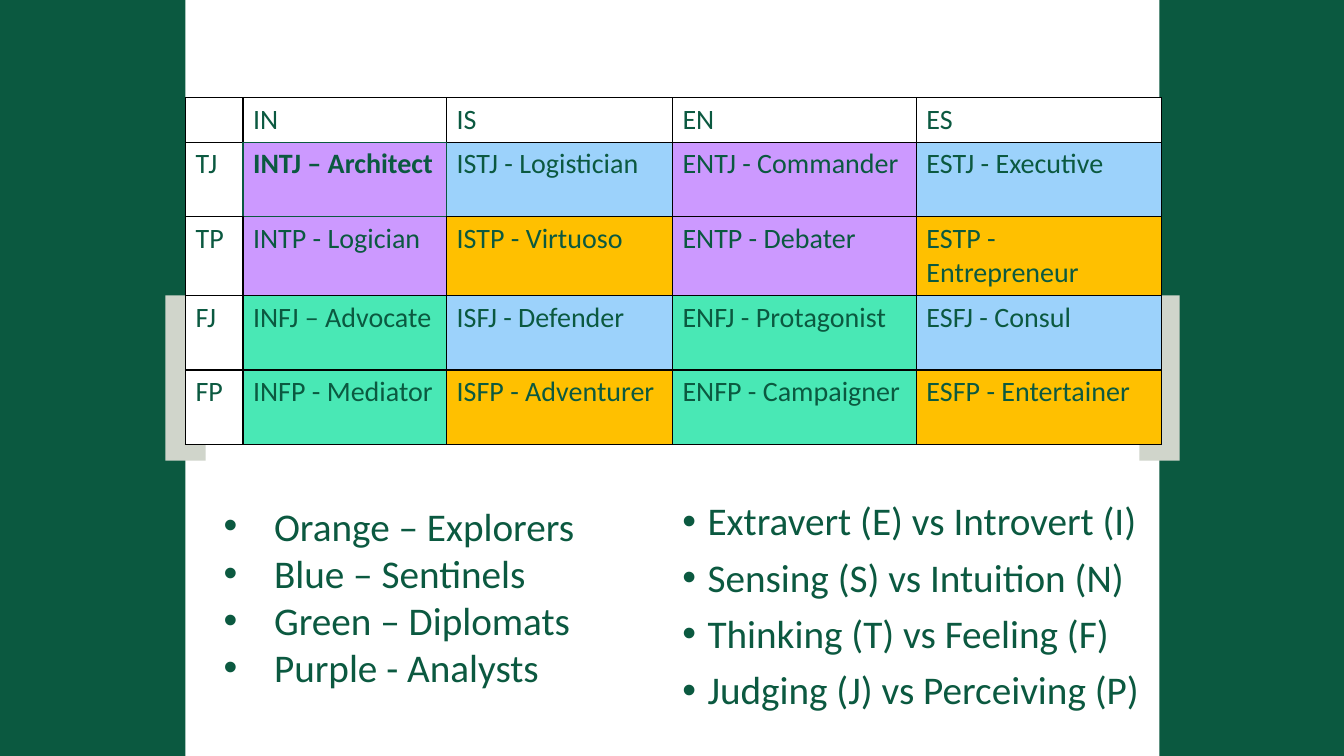
from dataclasses import dataclass

from lxml.etree import SubElement
from pptx import Presentation
from pptx.dml.color import RGBColor
from pptx.enum.shapes import MSO_SHAPE
from pptx.enum.text import MSO_AUTO_SIZE
from pptx.oxml.ns import qn
from pptx.slide import Slide
from pptx.table import _Cell
from pptx.text.text import _Paragraph
from pptx.util import Emu, Pt

SCALE = 9144  # EMU per px, 100 px to the inch


@dataclass(frozen=True)
class Theme:
    font: str = "Calibri"
    green: str = "0B5940"
    gray: str = "D0D5CB"
    white: str = "FFFFFF"
    black: str = "000000"
    cell: int = 20
    body: int = 28


@dataclass(frozen=True)
class Box:
    left: int
    top: int
    width: int
    height: int

    def emu(self) -> tuple[Emu, Emu, Emu, Emu]:
        return px(self.left), px(self.top), px(self.width), px(self.height)


@dataclass(frozen=True)
class Panel:
    box: Box
    color: str


@dataclass(frozen=True)
class Bullets:
    box: Box
    lines: tuple[str, ...]
    indent: int
    spacing: float
    before: int
    fit: MSO_AUTO_SIZE


THEME = Theme()
PANELS = [
    panel
    for side, tab in ((0, 164), (1150, 1130))
    for panel in (
        Panel(Box(side, 0, 184, 750), THEME.green),
        Panel(Box(tab, 293, 40, 164), THEME.gray),
    )
]
GRID = Box(184, 97, 968, 337)
WIDTHS = (57, 202, 224, 242, 243)
HEIGHTS = (41, 74, 74, 74, 74)
HEADS = ("IN", "IS", "EN", "ES")
ROLES = {
    "TJ": ("– Architect", "- Logistician", "- Commander", "- Executive"),
    "TP": ("- Logician", "- Virtuoso", "- Debater", "- Entrepreneur"),
    "FJ": ("– Advocate", "- Defender", "- Protagonist", "- Consul"),
    "FP": ("- Mediator", "- Adventurer", "- Campaigner", "- Entertainer"),
}
GROUPS = {"NT": "CC99FF", "NF": "49E8B5", "SJ": "9CD2FB", "SP": "FFC000"}
FOCUS = "INTJ"
# Sides that touch the focus cell, keyed by row and column
GREEN_SIDES = {(0, 1): "B", (1, 0): "R", (1, 1): "LRTB", (1, 2): "L", (2, 1): "T"}
LISTS = (
    Bullets(
        Box(212, 493, 416, 199),
        ("Orange – Explorers", "Blue – Sentinels", "Green – Diplomats", "Purple - Analysts"),
        50, 1.0, 0, MSO_AUTO_SIZE.SHAPE_TO_FIT_TEXT,
    ),
    Bullets(
        Box(667, 493, 567, 227),
        (
            "Extravert (E) vs Introvert (I)",
            "Sensing (S) vs Intuition (N)",
            "Thinking (T) vs Feeling (F)",
            "Judging (J) vs Perceiving (P)",
        ),
        25, 0.9, 10, MSO_AUTO_SIZE.NONE,
    ),
)


def px(count: int) -> Emu:
    return Emu(count * SCALE)


def rgb(code: str) -> RGBColor:
    return RGBColor.from_string(code)


def add_run(para: _Paragraph, text: str, size: int, bold: bool = False) -> None:
    run = para.add_run()
    run.text = text
    run.font.name = THEME.font
    run.font.size = Pt(size)
    run.font.bold = bold
    run.font.color.rgb = rgb(THEME.green)


def add_panel(slide: Slide, panel: Panel) -> None:
    shape = slide.shapes.add_shape(MSO_SHAPE.RECTANGLE, *panel.box.emu())
    shape.shadow.inherit = False
    shape.fill.solid()
    shape.fill.fore_color.rgb = rgb(panel.color)
    shape.line.fill.background()


def group_color(code: str) -> str:
    """Intuitives group by their third letter, sensors by their fourth."""
    key = code[1] + (code[2] if code[1] == "N" else code[3])
    return GROUPS[key]


def set_borders(cell: _Cell, green: str) -> None:
    """Draw all four sides, those named in green with the theme colour."""
    props = cell._tc.get_or_add_tcPr()
    for spot, side in enumerate("LRTB"):
        line = props.makeelement(qn(f"a:ln{side}"), {"w": str(Pt(1))})
        fill = SubElement(line, qn("a:solidFill"))
        color = THEME.green if side in green else THEME.black
        SubElement(fill, qn("a:srgbClr"), {"val": color})
        props.insert(spot, line)


def add_grid(slide: Slide) -> None:
    rows = [("", *HEADS)]
    rows += [
        (tail, *(f"{head}{tail} {role}" for head, role in zip(HEADS, roles)))
        for tail, roles in ROLES.items()
    ]
    table = slide.shapes.add_table(len(rows), len(WIDTHS), *GRID.emu()).table
    table.first_row = table.horz_banding = False
    for column, width in zip(table.columns, WIDTHS):
        column.width = px(width)
    for row, height in zip(table.rows, HEIGHTS):
        row.height = px(height)
    for y, texts in enumerate(rows):
        for x, text in enumerate(texts):
            cell = table.cell(y, x)
            color = group_color(text) if x and y else THEME.white
            cell.fill.solid()
            cell.fill.fore_color.rgb = rgb(color)
            set_borders(cell, GREEN_SIDES.get((y, x), ""))
            para = cell.text_frame.paragraphs[0]
            if text:
                add_run(para, text, THEME.cell, text.startswith(FOCUS))
            else:
                para.font.size = Pt(THEME.cell)


def add_bullets(slide: Slide, part: Bullets) -> None:
    frame = slide.shapes.add_textbox(*part.box.emu()).text_frame
    frame.word_wrap = True
    frame.auto_size = part.fit
    for index, text in enumerate(part.lines):
        para = frame.add_paragraph() if index else frame.paragraphs[0]
        para.line_spacing = part.spacing
        para.space_before = Pt(part.before)
        props = para._p.get_or_add_pPr()
        props.set("marL", str(px(part.indent)))
        props.set("indent", str(px(-part.indent)))
        SubElement(props, qn("a:buFont"), {"typeface": "Arial"})
        SubElement(props, qn("a:buChar"), {"char": "•"})
        add_run(para, text, THEME.body)


def main() -> None:
    deck = Presentation()
    deck.slide_width, deck.slide_height = px(1333), px(750)
    slide = deck.slides.add_slide(deck.slide_layouts[6])
    for panel in PANELS:
        add_panel(slide, panel)
    add_grid(slide)
    for part in LISTS:
        add_bullets(slide, part)
    deck.save("out.pptx")


if __name__ == "__main__":
    main()
